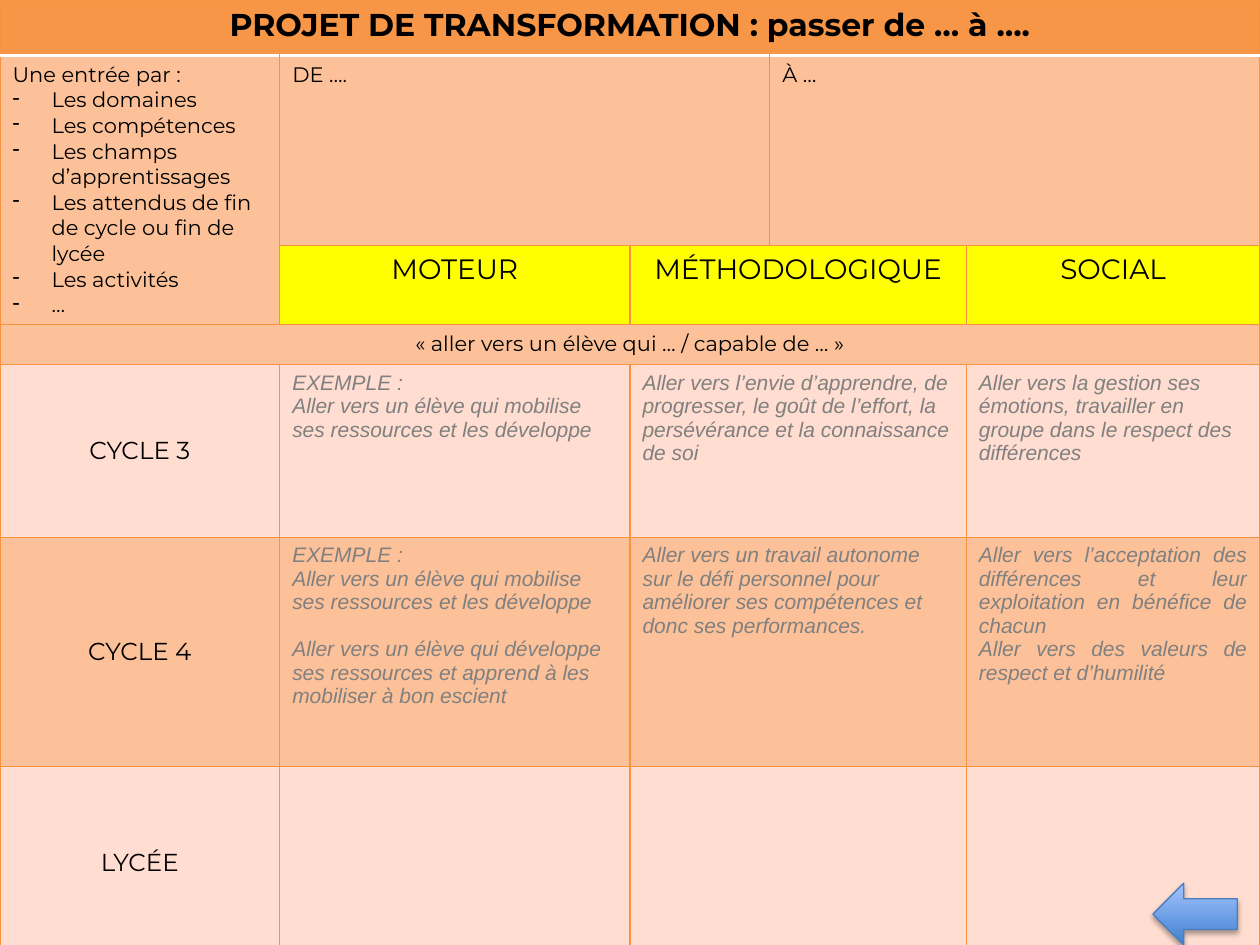
"""Build a slide with the transformation project table and a back arrow."""
import lxml.etree
import pptx
import pptx.dml.color
import pptx.enum.shapes
import pptx.enum.text
import pptx.oxml.ns
import pptx.util

ORANGE, PEACH, PALE, YELLOW = "F79646", "FCC199", "FFDDD0", "FFFF00"
BORDER, WHITE = "F69240", "FFFFFF"
LEFT, CENTER, JUSTIFY = (pptx.enum.text.PP_ALIGN.LEFT, pptx.enum.text.PP_ALIGN.CENTER,
                         pptx.enum.text.PP_ALIGN.JUSTIFY)
COLUMNS = [2.22, 2.78, 1.11, 1.56, 2.33]
ROWS = [0.44, 1.51, 0.52, 0.32, 1.37, 1.82, 1.52]
STYLES = {
    "title": dict(size=18, bold=True, align=CENTER),
    "body": dict(size=12),
    "note": dict(size=12, align=CENTER),
    "heading": dict(size=16, align=CENTER),
    "cycle": dict(size=14, align=CENTER, middle=True),
    "example": dict(size=12, font="Arial", color="808080", italic=True),
    "justified": dict(size=12, font="Arial", color="808080", italic=True, align=JUSTIFY),
}
MOBILISE = "Aller vers un élève qui mobilise ses ressources et les développe"
ENTRIES = ["Les domaines", "Les compétences", "Les champs d’apprentissages",
           "Les attendus de fin de cycle ou fin de lycée", "Les activités", "…"]

# row, column, row span, column span, fill, style, paragraphs
CELLS = [
    (0, 0, 1, 5, ORANGE, "title", ["PROJET DE TRANSFORMATION : passer de … à …."]),
    (1, 0, 2, 1, PEACH, "body", ["Une entrée par :"] + ["- " + entry for entry in ENTRIES]),
    (1, 1, 1, 2, PEACH, "body", ["DE …."]),
    (1, 3, 1, 2, PEACH, "body", ["À …"]),
    (2, 1, 1, 1, YELLOW, "heading", ["MOTEUR"]),
    (2, 2, 1, 2, YELLOW, "heading", ["MÉTHODOLOGIQUE"]),
    (2, 4, 1, 1, YELLOW, "heading", ["SOCIAL"]),
    (3, 0, 1, 5, PEACH, "note", ["« aller vers un élève qui … / capable de … »"]),
    (4, 0, 1, 1, PALE, "cycle", ["CYCLE 3"]),
    (4, 1, 1, 1, PALE, "example", ["EXEMPLE :", MOBILISE]),
    (4, 2, 1, 2, PALE, "example", ["Aller vers l’envie d’apprendre, de progresser, le goût de "
                                   "l’effort, la persévérance et la connaissance de soi"]),
    (4, 4, 1, 1, PALE, "example", ["Aller vers la gestion ses émotions, travailler en groupe "
                                   "dans le respect des différences"]),
    (5, 0, 1, 1, PEACH, "cycle", ["CYCLE 4"]),
    (5, 1, 1, 1, PEACH, "example", ["EXEMPLE :", MOBILISE,
                                    "Aller vers un élève qui développe ses ressources et "
                                    "apprend à les mobiliser à bon escient"]),
    (5, 2, 1, 2, PEACH, "example", ["Aller vers un travail autonome sur le défi personnel pour "
                                    "améliorer ses compétences et donc ses performances."]),
    (5, 4, 1, 1, PEACH, "justified", ["Aller vers l’acceptation des différences et leur "
                                      "exploitation en bénéfice de chacun",
                                      "Aller vers des valeurs de respect et d’humilité"]),
    (6, 0, 1, 1, PALE, "cycle", ["LYCÉE"]),
    (6, 1, 1, 1, PALE, "example", []),
    (6, 2, 1, 2, PALE, "example", []),
    (6, 4, 1, 1, PALE, "example", []),
]


def rgb(value):
    """Turn a hex string into a colour."""
    return pptx.dml.color.RGBColor.from_string(value)


def add_node(parent, tag, **attributes):
    """Append a drawing element with its attributes."""
    values = {key: str(value) for key, value in attributes.items()}
    return lxml.etree.SubElement(parent, pptx.oxml.ns.qn("a:" + tag), values)


def draw_borders(cell, row):
    """Outline a cell, with a white rule under the title row."""
    properties = cell._tc.get_or_add_tcPr()
    white_side = {0: "lnB", 1: "lnT"}.get(row)
    for index, side in enumerate(["lnL", "lnR", "lnT", "lnB"]):
        color, width = (WHITE, 2) if side == white_side else (BORDER, 0.75)
        line = add_node(properties, side, w=pptx.util.Pt(width))
        add_node(add_node(line, "solidFill"), "srgbClr", val=color)
        properties.remove(line)
        properties.insert(index, line)


def write(cell, paragraphs, size, font="Montserrat", color="000000", bold=False,
          italic=False, align=LEFT, middle=False):
    """Write styled paragraphs, with a dash bullet where the text starts with one."""
    if middle:
        cell.vertical_anchor = pptx.enum.text.MSO_ANCHOR.MIDDLE
    frame = cell.text_frame
    for index, text in enumerate(paragraphs):
        paragraph = frame.add_paragraph() if index else frame.paragraphs[0]
        paragraph.alignment = align
        if text.startswith("- "):
            properties = paragraph._p.get_or_add_pPr()
            properties.set("marL", str(pptx.util.Inches(0.31)))
            properties.set("indent", str(pptx.util.Inches(-0.31)))
            add_node(properties, "buChar", char="-")
        if index == 2 and paragraphs[0] == "EXEMPLE :":
            paragraph.space_before = pptx.util.Pt(13.5)
        run = paragraph.add_run()
        run.text = text.removeprefix("- ")
        run.font.size, run.font.name = pptx.util.Pt(size), font
        run.font.bold, run.font.italic = bold, italic
        run.font.color.rgb = rgb(color)


def add_project_table(slide):
    """Add the table and fill its grid."""
    lengths = [pptx.util.Inches(n) for n in (0, 0, sum(COLUMNS), sum(ROWS))]
    table = slide.shapes.add_table(len(ROWS), len(COLUMNS), *lengths).table
    for column, width in zip(table.columns, COLUMNS):
        column.width = pptx.util.Inches(width)
    for row, height in zip(table.rows, ROWS):
        row.height = pptx.util.Inches(height)
    for top, left, height, width, fill, style, paragraphs in CELLS:
        for row in range(top, top + height):
            for column in range(left, left + width):
                part = table.cell(row, column)
                part.fill.solid()
                part.fill.fore_color.rgb = rgb(fill)
                draw_borders(part, row)
        cell = table.cell(top, left)
        if height * width > 1:
            cell.merge(table.cell(top + height - 1, left + width - 1))
        write(cell, paragraphs, **STYLES[style])


def add_back_arrow(slide):
    """Add the shaded arrow in the bottom right corner."""
    arrow = slide.shapes.add_shape(pptx.enum.shapes.MSO_SHAPE.LEFT_ARROW,
                                   *[pptx.util.Inches(n) for n in (9.15, 7.01, 0.67, 0.49)])
    arrow.fill.gradient()
    arrow.fill.gradient_angle = 90
    for stop, color in zip(arrow.fill.gradient_stops, ["3F80CE", "A4C4FF"]):
        stop.color.rgb = rgb(color)
    arrow.line.color.rgb = rgb("4B7EBC")
    arrow.line.width = pptx.util.Pt(0.75)
    arrow.shadow.inherit = False
    effects = arrow._element.spPr.find(pptx.oxml.ns.qn("a:effectLst"))
    shadow = add_node(effects, "outerShdw", blurRad=pptx.util.Pt(3.1), dist=pptx.util.Pt(1.8),
                      dir=90 * 60000, rotWithShape=0)
    add_node(add_node(shadow, "srgbClr", val="000000"), "alpha", val=35000)


def main():
    """Build and save the slide."""
    deck = pptx.Presentation()
    deck.slide_width, deck.slide_height = pptx.util.Inches(10), pptx.util.Inches(7.5)
    slide = deck.slides.add_slide(deck.slide_layouts[6])
    add_project_table(slide)
    add_back_arrow(slide)
    deck.save("out.pptx")


if __name__ == "__main__":
    main()
